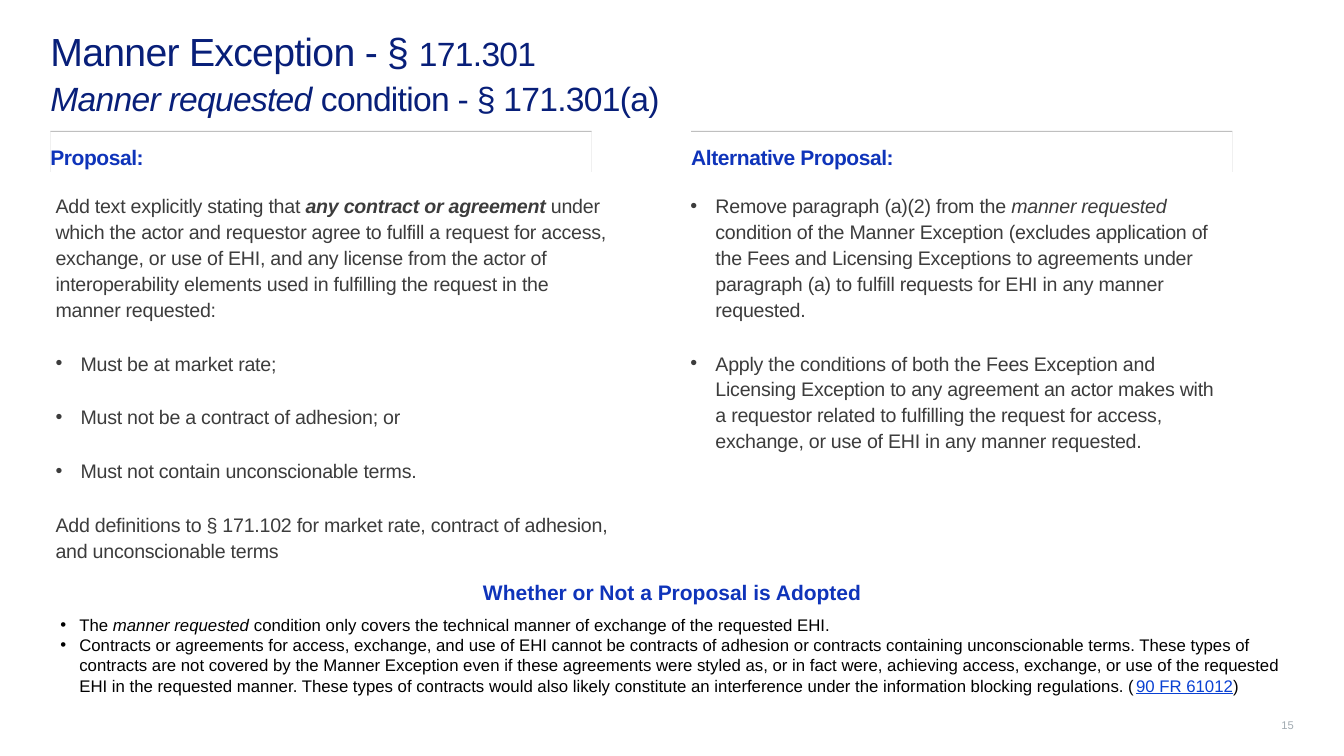
from lxml.etree import SubElement
from pptx import Presentation
from pptx.dml.color import RGBColor
from pptx.enum.text import MSO_ANCHOR, MSO_AUTO_SIZE, PP_ALIGN
from pptx.oxml import parse_xml
from pptx.oxml.ns import nsdecls, qn
from pptx.util import Cm, Pt

COLORS = {"title": "081F79", "heading": "0F34BA", "body": "3C3C3C", "note": "000000",
          "cite": "0A41D3", "number": "A1AAB1", "panel": "FFFFFF", "edge": "BFBFBF"}

TITLE = {"size": Pt(28), "color": "title", "spc": -50}
SUBTITLE = TITLE | {"size": Pt(24)}
HEADING = {"size": Pt(15), "color": "heading", "bold": True, "spc": -30}
BODY = {"size": Pt(14), "color": "body", "spc": -20}
NOTE = {"size": Pt(12), "color": "note"}
ITALIC = {"italic": True}

LEFT = Cm(1.27)
FULL_WIDTH = Cm(31.34)
HEAD_TOP, HEAD_WIDTH, HEAD_HEIGHT = Cm(3.33), Cm(13.64), Cm(1.04)
BODY_TOP, BODY_HEIGHT = Cm(4.7), Cm(10.9)
BODY_INDENT, NOTE_INDENT = Cm(0.63), Cm(0.48)

PROPOSAL = [
    (False, [("Add text explicitly stating that ", {}),
             ("any contract or agreement ", {"bold": True, "italic": True}),
             ("under which the actor and requestor agree to fulfill a request for access, "
              "exchange, or use of EHI, and any license from the actor of interoperability "
              "elements used in fulfilling the request in the manner requested:", {})]),
    (True, [("Must be at market rate;", {})]),
    (True, [("Must not be a contract of adhesion; or", {})]),
    (True, [("Must not contain unconscionable terms.", {})]),
    (False, [("Add definitions to § 171.102 for market rate, contract of adhesion, "
              "and unconscionable terms", {})]),
]
ALTERNATIVE = [
    (True, [("Remove paragraph (a)(2) from the ", {}), ("manner requested", ITALIC),
            (" condition of the Manner Exception (excludes application of the Fees and "
             "Licensing Exceptions to agreements under paragraph (a) to fulfill requests "
             "for EHI in any manner requested.", {})]),
    (True, [("Apply the conditions of both the Fees Exception and Licensing Exception to any "
             "agreement an actor makes with a requestor related to fulfilling the request for "
             "access, exchange, or use of EHI in any manner requested.", {})]),
]
NOTES = [
    [("The ", {}), ("manner requested", ITALIC),
     (" condition only covers the technical manner of exchange of the requested EHI.", {})],
    [("Contracts or agreements for access, exchange, and use of EHI cannot be contracts of "
      "adhesion or contracts containing unconscionable terms. These types of contracts are not "
      "covered by the Manner Exception even if these agreements were styled as, or in fact were, "
      "achieving access, exchange, or use of the requested EHI in the requested manner. These "
      "types of contracts would also likely constitute an interference under the information "
      "blocking regulations. (", {}),
     ("90 FR 61012", {"color": "cite", "underline": True}), (")", {})],
]


def place(sp, left, top, width, height, insets, anchor=MSO_ANCHOR.TOP):
    """Set position, insets and anchor; return the text frame."""
    sp.left, sp.top, sp.width, sp.height = left, top, width, height
    tf = sp.text_frame
    frame = dict(zip(("margin_left", "margin_top", "margin_right", "margin_bottom"), insets))
    frame |= {"word_wrap": True, "auto_size": MSO_AUTO_SIZE.NONE, "vertical_anchor": anchor}
    for name, value in frame.items():
        setattr(tf, name, value)
    return tf


def set_bullet(p, indent):
    """Give a hanging bullet, or none when the indent is 0."""
    pPr = p._p.get_or_add_pPr()
    pPr.set("marL", str(int(indent)))
    pPr.set("indent", str(-int(indent)))
    if indent:
        SubElement(pPr, qn("a:buFont")).set("typeface", "Arial")
        SubElement(pPr, qn("a:buChar")).set("char", "•")
    else:
        SubElement(pPr, qn("a:buNone"))


def add_run(p, text, style):
    r = p.add_run()
    r.text = text
    fmt = {"name": "Arial", "bold": False, "italic": False} | style
    r.font.color.rgb = RGBColor.from_string(COLORS[fmt.pop("color")])
    spacing = fmt.pop("spc", None)
    if spacing:
        r._r.get_or_add_rPr().set("spc", str(spacing))
    for name, value in fmt.items():
        setattr(r.font, name, value)


def add_text(tf, runs, style, indent=0, before=0, spacing=1.0, align=PP_ALIGN.LEFT):
    """Fill the first paragraph if it is empty, else append one."""
    first = not tf.paragraphs[0].runs
    p = tf.paragraphs[0] if first else tf.add_paragraph()
    set_bullet(p, indent)
    fmt = {"alignment": align, "line_spacing": spacing, "space_before": Pt(0 if first else before)}
    for name, value in fmt.items():
        setattr(p, name, value)
    for text, change in runs:
        add_run(p, text, style | change)
    return p


def fill_title(sp):
    tf = place(sp, LEFT, Cm(0.56), FULL_WIDTH, Cm(2.46), (0, 0, 0, Cm(0.13)))
    p = add_text(tf, [("Manner Exception - § ", {}), ("171.301 ", SUBTITLE)], TITLE, spacing=1.1)
    p.add_line_break()
    add_run(p, "Manner requested ", SUBTITLE | ITALIC)
    add_run(p, "condition - § 171.301(a)", SUBTITLE)


def fill_heading(sp, left, text):
    tf = place(sp, left, HEAD_TOP, HEAD_WIDTH, HEAD_HEIGHT, (0, Cm(0.25), 0, Cm(0.13)))
    sp.fill.solid()
    sp.fill.fore_color.rgb = RGBColor.from_string(COLORS["panel"])
    sp._element.spPr.append(parse_xml(
        f'<a:effectLst {nsdecls("a")}><a:outerShdw dist="12700" dir="16200000" rotWithShape="0">'
        f'<a:srgbClr val="{COLORS["edge"]}"/></a:outerShdw></a:effectLst>'))
    add_text(tf, [(text, {})], HEADING, spacing=1.1)


def fill_body(sp, left, width, items):
    tf = place(sp, left, BODY_TOP, width, BODY_HEIGHT, [Cm(0.13)] * 4)
    for bulleted, runs in items:
        add_text(tf, runs, BODY, BODY_INDENT if bulleted else 0, before=20, spacing=1.1)


def add_notes(s):
    sp = s.shapes.add_textbox(0, 0, 0, 0)
    sides, ends = Cm(0.25), Cm(0.13)
    tf = place(sp, LEFT, Cm(14.48), FULL_WIDTH, Cm(3.2), (sides, ends, sides, ends))
    add_text(tf, [("Whether or Not a Proposal is Adopted", {})], HEADING | {"spc": 0},
             align=PP_ALIGN.CENTER)
    for i, runs in enumerate(NOTES):
        add_text(tf, runs, NOTE, NOTE_INDENT, before=0 if i else 7)


def add_page_number(s):
    sp = s.shapes.add_textbox(0, 0, 0, 0)
    tf = place(sp, Cm(31.85), Cm(17.5), Cm(0.76), Cm(0.94), [0] * 4, MSO_ANCHOR.BOTTOM)
    add_text(tf, [("15", {})], {"size": Pt(8), "color": "number"}, spacing=0.9,
             align=PP_ALIGN.RIGHT)


def main():
    prs = Presentation()
    prs.slide_width, prs.slide_height = Cm(33.87), Cm(19.05)
    s = prs.slides.add_slide(prs.slide_layouts.get_by_name("Comparison"))
    title, left_head, left_body, right_head, right_body = s.placeholders
    fill_title(title)
    fill_heading(left_head, LEFT, "Proposal:")
    fill_body(left_body, LEFT, Cm(14.3), PROPOSAL)
    fill_heading(right_head, Cm(17.42), "Alternative Proposal:")
    fill_body(right_body, Cm(17.27), HEAD_WIDTH, ALTERNATIVE)
    add_notes(s)
    add_page_number(s)
    prs.save("out.pptx")


if __name__ == "__main__":
    main()
